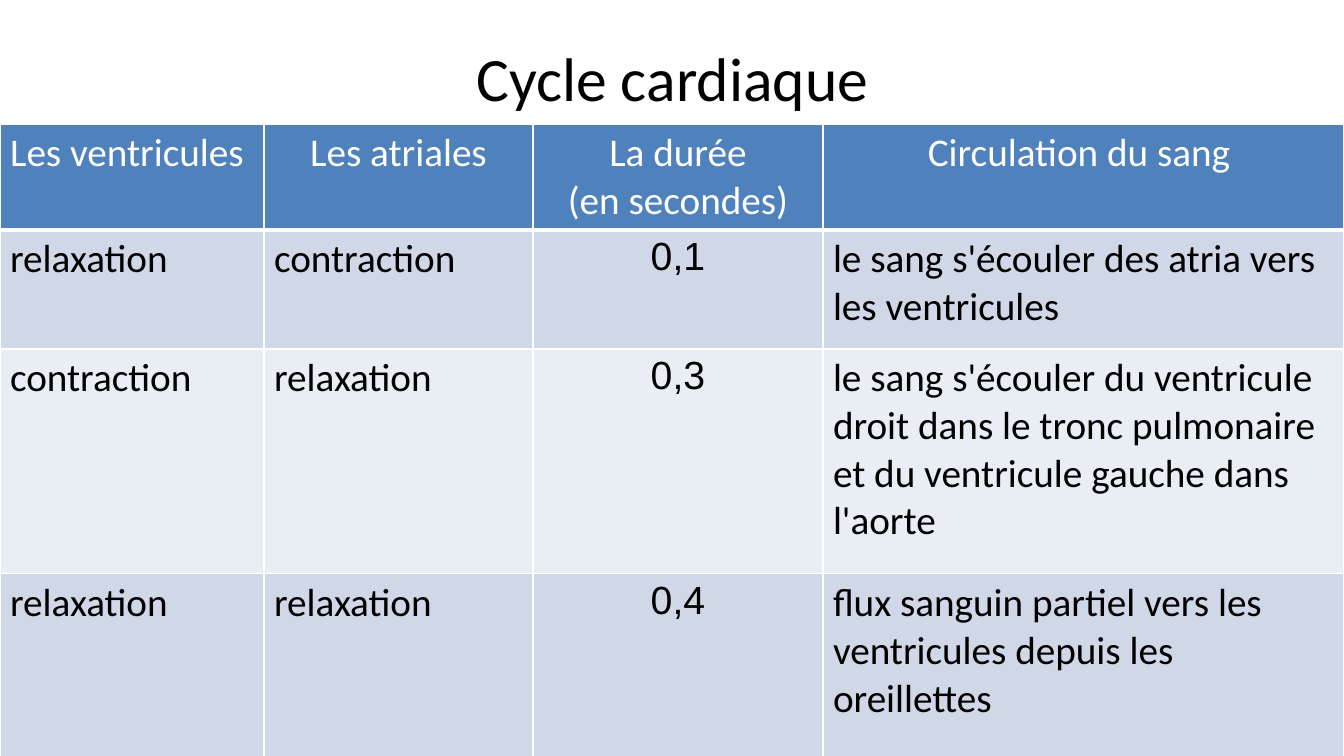
from lxml.etree import SubElement
from pptx import Presentation
from pptx.dml.color import RGBColor
from pptx.enum.text import MSO_ANCHOR, MSO_AUTO_SIZE, PP_ALIGN
from pptx.oxml.ns import qn
from pptx.util import Pt

SCALE = 914400 / 100.8
SLIDE_SIZE = (1344, 756)
TITLE = "Cycle cardiaque"
TITLE_BOX = {"left": 93, "top": 40, "width": 1159, "height": 84}
TITLE_FRAME = {
    "margin_left": 0, "margin_top": 0, "margin_right": 0, "margin_bottom": 0,
    "auto_size": MSO_AUTO_SIZE.NONE, "word_wrap": False,
    "vertical_anchor": MSO_ANCHOR.MIDDLE,
}

TABLE_TOP = 124
COLUMN_WIDTHS = (264, 269, 290, 521)
ROW_HEIGHTS = (98, 119, 225, 216)
ROWS = [
    ("Les ventricules", "Les atriales", "La durée\n(en secondes)", "Circulation du sang "),
    ("relaxation", "contraction", "0,1", "le sang s'écouler des atria vers les ventricules"),
    ("contraction", "relaxation", "0,3",
     "le sang s'écouler du ventricule droit dans le tronc pulmonaire "
     "et du ventricule gauche dans l'aorte"),
    ("relaxation", "relaxation", "0,4",
     "flux sanguin partiel vers les ventricules depuis les oreillettes"),
]
DURATION_COLUMN = 2
HEADER_FILL = "4F81BD"
BAND_FILLS = ("E9EDF4", "D0D8E8")
WHITE, BLACK = "FFFFFF", "000000"


def px(length):
    return round(length * SCALE)


def color(value):
    return RGBColor.from_string(value)


def assign(target, values):
    for name, value in values.items():
        setattr(target, name, value)


def format_text(frame, size, font, ink, align):
    for para in frame.paragraphs:
        para.alignment = align
        for span in para.runs:
            assign(span.font, {"size": Pt(size), "name": font, "bold": False})
            span.font.color.rgb = color(ink)


def add_borders(cell, bottom):
    properties = cell._tc.get_or_add_tcPr()
    for side, points in (("L", 1), ("R", 1), ("T", 1), ("B", bottom)):
        line = SubElement(properties, qn(f"a:ln{side}"), w=str(Pt(points)))
        SubElement(SubElement(line, qn("a:solidFill")), qn("a:srgbClr"), val=WHITE)


def add_title(page):
    title = page.shapes.title
    assign(title, {name: px(length) for name, length in TITLE_BOX.items()})
    frame = title.text_frame
    frame.text = TITLE
    assign(frame, TITLE_FRAME)
    format_text(frame, 44, "Calibri", BLACK, PP_ALIGN.CENTER)
    frame.paragraphs[0].line_spacing = 0.9


def fill_cell(cell, text, row, column):
    header = row == 0
    duration = column == DURATION_COLUMN
    centered = duration or (header and column > 0)
    cell.text = text
    format_text(
        cell.text_frame, 28,
        "Arial" if duration and not header else "Calibri",
        WHITE if header else BLACK,
        PP_ALIGN.CENTER if centered else PP_ALIGN.LEFT,
    )
    add_borders(cell, 3 if header else 1)
    cell.fill.solid()
    cell.fill.fore_color.rgb = color(HEADER_FILL if header else BAND_FILLS[row % 2])


def add_cycle_table(page):
    table = page.shapes.add_table(
        len(ROWS), len(COLUMN_WIDTHS), 0, px(TABLE_TOP),
        px(sum(COLUMN_WIDTHS)), px(sum(ROW_HEIGHTS)),
    ).table
    for column, width in zip(table.columns, COLUMN_WIDTHS):
        column.width = px(width)
    for row, height in zip(table.rows, ROW_HEIGHTS):
        row.height = px(height)
    for row, texts in enumerate(ROWS):
        for column, text in enumerate(texts):
            fill_cell(table.cell(row, column), text, row, column)


def main():
    """Build the cardiac cycle slide and save it."""
    deck = Presentation()
    deck.slide_width, deck.slide_height = map(px, SLIDE_SIZE)
    page = deck.slides.add_slide(deck.slide_layouts[5])
    page.background.fill.solid()
    page.background.fill.fore_color.rgb = color(WHITE)
    add_title(page)
    add_cycle_table(page)
    deck.save("out.pptx")


if __name__ == "__main__":
    main()
